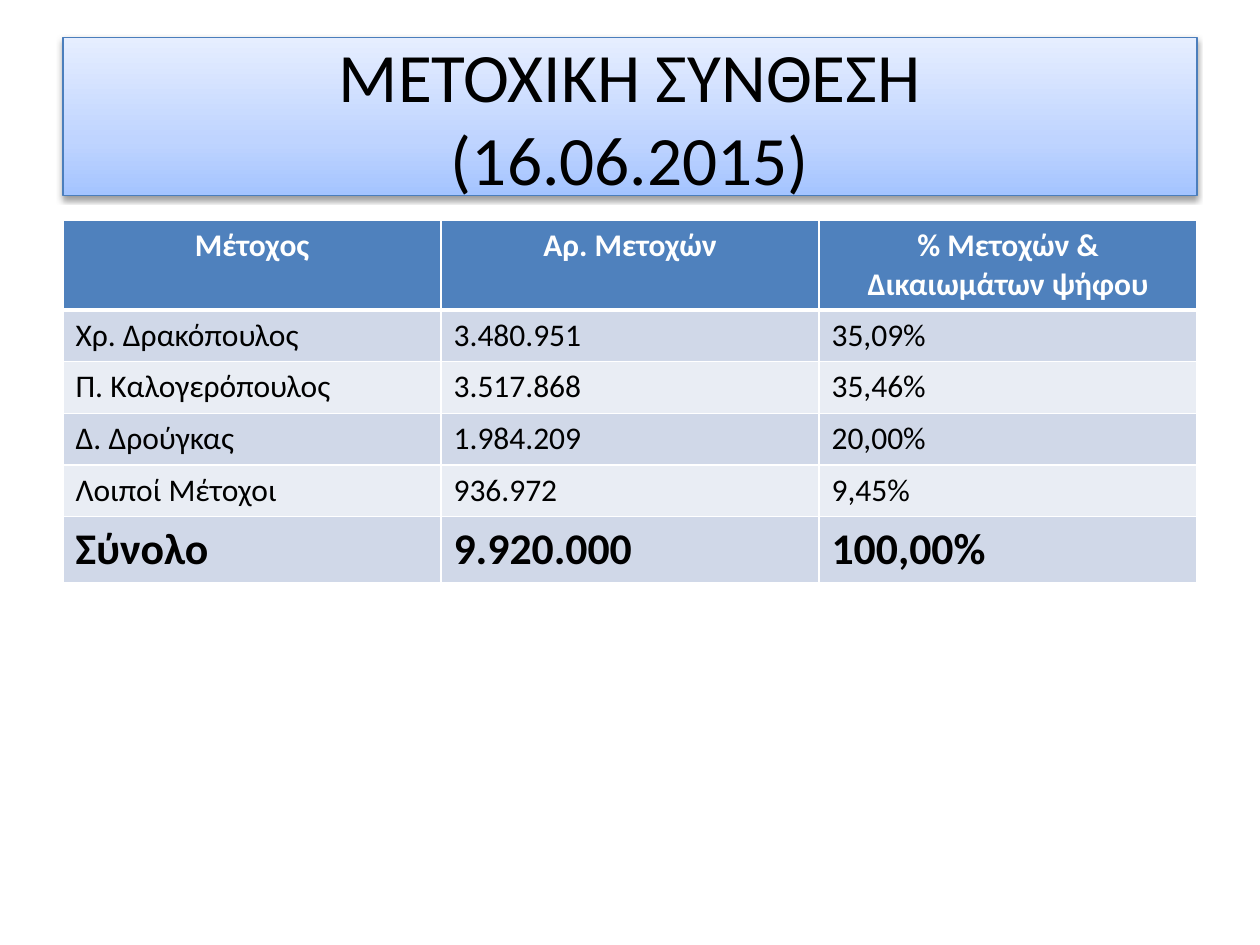
import dataclasses

import lxml.etree
import pptx
import pptx.dml.color
import pptx.enum.shapes
import pptx.enum.text
import pptx.oxml.ns
import pptx.util


@dataclasses.dataclass(frozen=True)
class Theme:
    font: str = "Calibri"
    title_size: float = 39.6
    body_size: float = 18
    total_size: float = 25
    dark: str = "000000"
    light: str = "FFFFFF"
    outline: str = "4B7EBC"
    header: str = "4F81BD"
    bands: tuple = ("D0D8E8", "E9EDF4")
    gradient: tuple = ((0, "A4C4FF"), (35, "BFD4FF"), (100, "E6EEFF"))


THEME = Theme()
WIDTH, HEIGHT = pptx.util.Inches(10), pptx.util.Inches(7.5)
MARGIN = 0.05
TITLE_TOP, TITLE_HEIGHT = 0.04, 1 / 6
TABLE_TOP = 1.75 / 7.5
HEADER_HEIGHT, ROW_HEIGHT, TOTAL_HEIGHT = 0.7, 0.41, 0.52

TITLE = "ΜΕΤΟΧΙΚΗ ΣΥΝΘΕΣΗ\n(16.06.2015)"
SHAREHOLDERS = [
    ("Μέτοχος", "Αρ. Μετοχών", "% Μετοχών & Δικαιωμάτων ψήφου"),
    ("Χρ. Δρακόπουλος", "3.480.951", "35,09%"),
    ("Π. Καλογερόπουλος", "3.517.868", "35,46%"),
    ("Δ. Δρούγκας", "1.984.209", "20,00%"),
    ("Λοιποί Μέτοχοι", "936.972", "9,45%"),
    ("Σύνολο", "9.920.000", "100,00%"),
]


def color(value):
    return pptx.dml.color.RGBColor.from_string(value)


def add_child(parent, tag, **attributes):
    name = pptx.oxml.ns.qn(tag)
    values = {key: str(value) for key, value in attributes.items()}
    return lxml.etree.SubElement(parent, name, values)


def write_text(text_frame, text, alignment, text_color, **font_format):
    paragraph = text_frame.paragraphs[0]
    paragraph.text = text
    paragraph.alignment = alignment
    for run in paragraph.runs:
        run.font.color.rgb = color(text_color)
        for name, value in {"name": THEME.font, **font_format}.items():
            setattr(run.font, name, value)


def fill_gradient(shape, stops):
    shape.fill.gradient()
    shape.fill.gradient_angle = 90
    stop_list = shape._element.spPr.find(".//" + pptx.oxml.ns.qn("a:gsLst"))
    stop_list.clear()
    for position, value in stops:
        stop = add_child(stop_list, "a:gs", pos=position * 1000)
        add_child(stop, "a:srgbClr", val=value)


def add_shadow(shape):
    shape.shadow.inherit = False
    effects = shape._element.spPr.find(pptx.oxml.ns.qn("a:effectLst"))
    shadow = add_child(
        effects, "a:outerShdw", blurRad=pptx.util.Pt(3.1),
        dist=pptx.util.Pt(1.6), dir=90 * 60000, rotWithShape=0,
    )
    shadow_color = add_child(shadow, "a:srgbClr", val=THEME.dark)
    add_child(shadow_color, "a:alpha", val=38000)


def add_title(slide):
    shape = slide.shapes.add_shape(
        pptx.enum.shapes.MSO_SHAPE.RECTANGLE,
        int(WIDTH * MARGIN), int(HEIGHT * TITLE_TOP),
        int(WIDTH * (1 - 2 * MARGIN)), int(HEIGHT * TITLE_HEIGHT),
    )
    fill_gradient(shape, THEME.gradient)
    shape.line.color.rgb = color(THEME.outline)
    shape.line.width = pptx.util.Pt(0.75)
    add_shadow(shape)
    frame_format = {
        "word_wrap": True,
        "vertical_anchor": pptx.enum.text.MSO_ANCHOR.MIDDLE,
    }
    for name, value in frame_format.items():
        setattr(shape.text_frame, name, value)
    write_text(
        shape.text_frame, TITLE, pptx.enum.text.PP_ALIGN.CENTER, THEME.dark,
        size=pptx.util.Pt(THEME.title_size),
    )


def add_borders(cell, widths):
    properties = cell._tc.get_or_add_tcPr()
    for side, width in widths.items():
        line = add_child(properties, f"a:ln{side}", w=pptx.util.Pt(width))
        fill = add_child(line, "a:solidFill")
        add_child(fill, "a:srgbClr", val=THEME.light)


def style_row(row_index, last_index):
    if row_index == 0:
        return {
            "fill": THEME.header, "text_color": THEME.light, "bold": True,
            "alignment": pptx.enum.text.PP_ALIGN.CENTER,
            "size": THEME.body_size, "height": HEADER_HEIGHT,
        }
    is_total = row_index == last_index
    return {
        "fill": THEME.bands[(row_index - 1) % 2], "text_color": THEME.dark,
        "bold": is_total, "alignment": pptx.enum.text.PP_ALIGN.LEFT,
        "size": THEME.total_size if is_total else THEME.body_size,
        "height": TOTAL_HEIGHT if is_total else ROW_HEIGHT,
    }


def add_shareholder_table(slide, rows):
    last_index = len(rows) - 1
    styles = [style_row(index, last_index) for index in range(len(rows))]
    table = slide.shapes.add_table(
        len(rows), len(rows[0]), int(WIDTH * MARGIN), int(HEIGHT * TABLE_TOP),
        int(WIDTH * (1 - 2 * MARGIN)),
        pptx.util.Inches(sum(style["height"] for style in styles)),
    ).table
    for row_index, (values, style) in enumerate(zip(rows, styles)):
        table.rows[row_index].height = pptx.util.Inches(style["height"])
        top = 3 if row_index == 1 else 1
        bottom = 3 if row_index == 0 else 1
        for column_index, value in enumerate(values):
            cell = table.cell(row_index, column_index)
            add_borders(cell, {"L": 1, "R": 1, "T": top, "B": bottom})
            cell.fill.solid()
            cell.fill.fore_color.rgb = color(style["fill"])
            write_text(
                cell.text_frame, value, style["alignment"],
                style["text_color"], size=pptx.util.Pt(style["size"]),
                bold=style["bold"],
            )


def main():
    presentation = pptx.Presentation()
    presentation.slide_width, presentation.slide_height = WIDTH, HEIGHT
    slide = presentation.slides.add_slide(presentation.slide_layouts[6])
    add_title(slide)
    add_shareholder_table(slide, SHAREHOLDERS)
    presentation.save("out.pptx")


if __name__ == "__main__":
    main()
